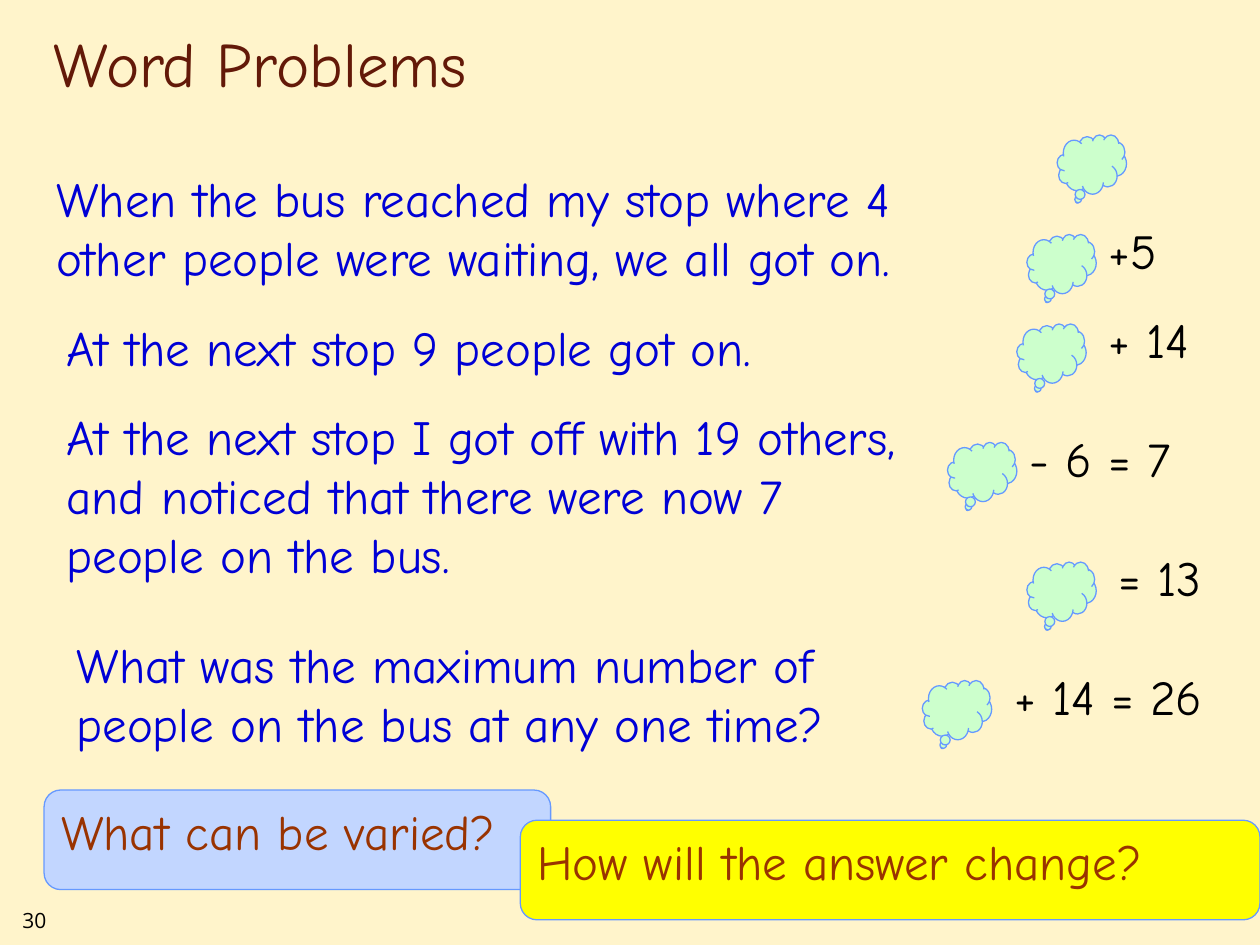
from typing import NamedTuple

from pptx import Presentation
from pptx.dml.color import RGBColor
from pptx.enum.shapes import MSO_SHAPE
from pptx.enum.text import MSO_ANCHOR, PP_ALIGN
from pptx.util import Inches, Pt

COLORS = {
    "background": "FFF4CB",
    "title": "631908",
    "story": "0000D5",
    "black": "000000",
    "prompt": "993300",
    "cloud": "CCFFCC",
    "outline": "6699FF",
    "blue": "C2D6FF",
    "yellow": "FFFF00",
}


class Story(NamedTuple):
    text: str
    left: float
    top: float
    width: float
    height: float


class Expression(NamedTuple):
    text: str
    cloud_left: float
    cloud_top: float
    text_left: float
    text_width: float


class Prompt(NamedTuple):
    text: str
    left: float
    top: float
    width: float
    fill: str


STORIES = [
    Story("At the next stop 9 people got on.", 0.43, 2.47, 7.01, 0.57),
    Story("At the next stop I got off with 19 others, and noticed that "
          "there were now 7 people on the bus.", 0.43, 3.18, 7.01, 1.51),
    Story("What was the maximum number of people on the bus at any one time?",
          0.51, 4.99, 7.01, 1.04),
    Story("When the bus reached my stop where 4 other people were waiting, "
          "we all got on.", 0.35, 1.29, 7.56, 1.04),
]

EXPRESSIONS = [
    Expression("+5", 8.15, 1.86, 8.7, 1.02),
    Expression("+ 14", 8.07, 2.57, 8.7, 1.26),
    Expression("- 6 = 7", 7.52, 3.51, 8.07, 1.73),
    Expression("= 13", 8.15, 4.46, 8.78, 1.26),
    Expression("+ 14 = 26", 7.32, 5.4, 7.95, 2.32),
]

PROMPTS = [
    Prompt("What can be varied?", 0.35, 6.27, 4.02, "blue"),
    Prompt("How will the answer change?", 4.13, 6.51, 5.87, "yellow"),
]


def rgb(name: str) -> RGBColor:
    return RGBColor.from_string(COLORS[name])


def write(sp, text: str, *, color: str = "black", size: float = 28,
          font: str = "Comic Neue", anchor=MSO_ANCHOR.TOP) -> None:
    tf = sp.text_frame
    tf.word_wrap = True
    tf.vertical_anchor = anchor
    p = tf.paragraphs[0]
    p.alignment = PP_ALIGN.LEFT
    r = p.add_run()
    r.text = text
    r.font.name = font
    r.font.size = Pt(size)
    r.font.color.rgb = rgb(color)


def add_text(shapes, text: str, left: float, top: float, width: float,
             height: float, **style) -> None:
    box = shapes.add_textbox(Inches(left), Inches(top), Inches(width), Inches(height))
    write(box, text, **style)


def add_outlined(shapes, kind, left: float, top: float, width: float,
                 height: float, fill: str):
    sp = shapes.add_shape(kind, Inches(left), Inches(top), Inches(width), Inches(height))
    sp.shadow.inherit = False
    sp.fill.solid()
    sp.fill.fore_color.rgb = rgb(fill)
    sp.line.color.rgb = rgb("outline")
    sp.line.width = Pt(0.75)
    return sp


def add_cloud(shapes, left: float, top: float) -> None:
    add_outlined(shapes, MSO_SHAPE.CLOUD_CALLOUT, left, top, 0.55, 0.47, "cloud")


def add_expression(shapes, e: Expression) -> None:
    group = shapes.add_group_shape()
    add_cloud(group.shapes, e.cloud_left, e.cloud_top)
    add_text(group.shapes, e.text, e.text_left, e.cloud_top - 0.16, e.text_width, 0.57)


def add_prompt(shapes, prompt: Prompt) -> None:
    sp = add_outlined(shapes, MSO_SHAPE.ROUNDED_RECTANGLE, prompt.left, prompt.top,
                      prompt.width, 0.79, prompt.fill)
    write(sp, prompt.text, color="prompt")


def main() -> None:
    prs = Presentation()
    prs.slide_width, prs.slide_height = Inches(10), Inches(7.5)
    s = prs.slides.add_slide(prs.slide_layouts[6])
    s.background.fill.solid()
    s.background.fill.fore_color.rgb = rgb("background")

    add_text(s.shapes, "30", 0.08, 7.15, 0.75, 0.3, size=12, font="Open Sans")
    add_text(s.shapes, "Word Problems", 0.33, 0.17, 8.5, 0.67, size=36,
             color="title", anchor=MSO_ANCHOR.BOTTOM)
    add_cloud(s.shapes, 8.39, 1.07)
    for expression in EXPRESSIONS:
        add_expression(s.shapes, expression)
    for story in STORIES:
        add_text(s.shapes, *story, color="story")
    for prompt in PROMPTS:
        add_prompt(s.shapes, prompt)

    prs.save("out.pptx")


if __name__ == "__main__":
    main()
